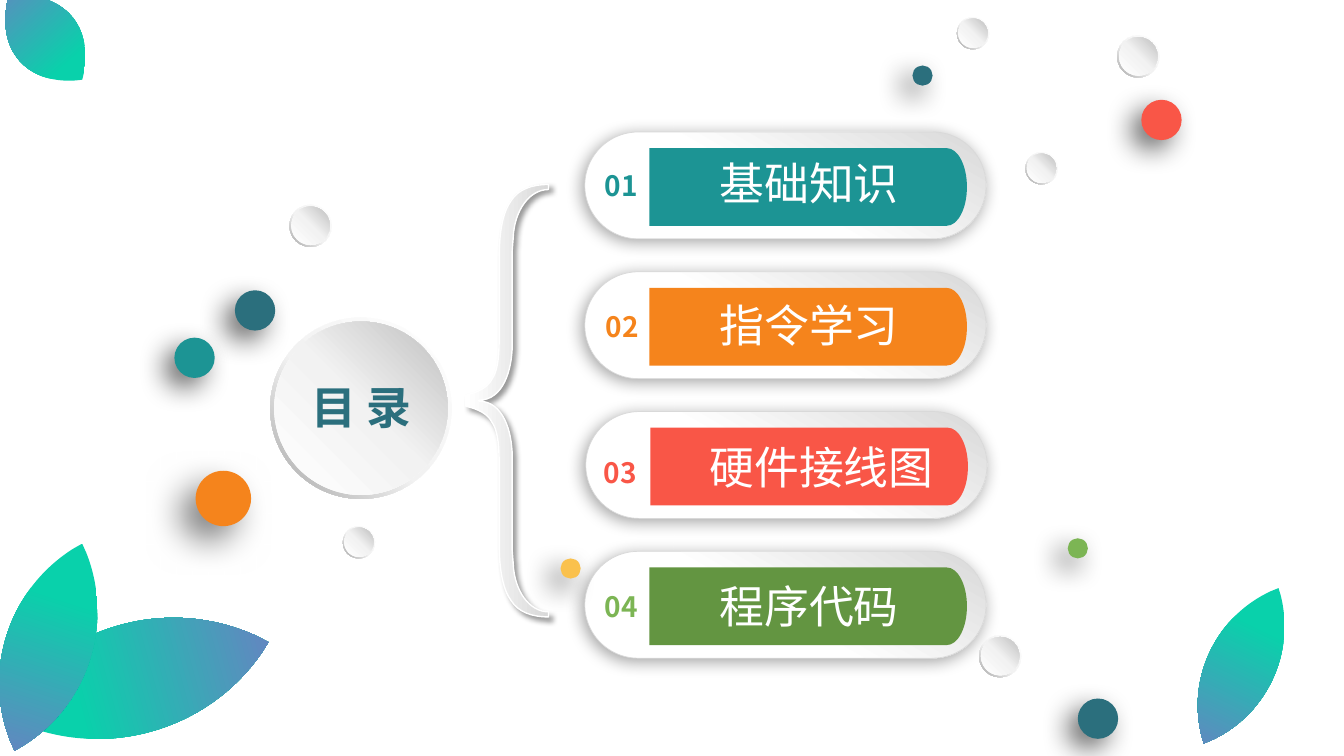
from pptx import Presentation
from pptx.dml.color import RGBColor
from pptx.enum.shapes import MSO_SHAPE
from pptx.enum.text import MSO_ANCHOR, MSO_AUTO_SIZE, PP_ALIGN
from pptx.oxml import parse_xml
from pptx.oxml.ns import nsdecls, qn
from pptx.util import Inches, Pt

FONT = "Noto Sans CJK SC"
COLORS = {
    "white": "FFFFFF", "silver": "D9D9D9", "teal": "1C9494", "orange": "F5841C",
    "red": "F95647", "green": "639541", "lime": "7CB554", "petrol": "2B6F7D",
    "yellow": "FAC14D", "mist": "F2F2F2", "grey": "BFBFBF", "dark grey": "A6A6A6",
    "mint": "09D1AB", "violet": "6E7DC3", "black": "000000",
}
# Gradients: stops as (percent, colour), then the clockwise angle
PILL_GRADIENT = [(45, "white"), (100, "silver")], 300
PILL_EDGE = [(0, "silver"), (100, "white")], 300
RIM_GRADIENT = [(0, "white"), (55, "mist"), (100, "dark grey")], 135
PEARL_GRADIENT = [(0, "white"), (51, "mist"), (100, "grey")], 315
BRACE_GRADIENT = [(0, "white"), (100, "silver")], 0
LEAF_STOPS = [(0, "mint"), (31, "mint"), (100, "violet")]
# Shadows: opacity percent, blur, distance, direction
PILL_SHADOW = 34, 12, 3, 135
BRACE_SHADOW = 40, 4, 3, 45
DOT_SHADOW = 60, 20, 10, 135
BIG_DOT_SHADOW = 50, 25, 15, 135

# Outlines: a pair is a corner, six numbers are a cubic curve
TAB_OUTLINE = [(0, 0), (0.56, 0), (0.83, 0), (2.95, 0), (3.06, 0, 3.15, 0.17, 3.15, 0.385),
               (3.15, 0.6, 3.06, 0.77, 2.95, 0.77), (0.56, 0.77), (0, 0.77)]
LEAF_SIDE = [(0.5, 0), (0.42, 0.035), (0.17, 0.155, 0, 0.315, 0, 0.5),
             (0, 0.685, 0.17, 0.845, 0.42, 0.965), (0.5, 1)]
BRACE_HALF = [(0, 2.09), (0.13, 2.06, 0.22, 2.01, 0.26, 1.93),
              (0.31, 1.86, 0.33, 1.73, 0.33, 1.55), (0.33, 0.74),
              (0.33, 0.46, 0.37, 0.27, 0.45, 0.16),
              (0.52, 0.05, 0.65, 0, 0.82, 0), (0.82, 0.05),
              (0.63, 0.05, 0.48, 0.26, 0.47, 0.53), (0.46, 0.66), (0.46, 1.59),
              (0.46, 1.84, 0.37, 2.14, 0.13, 2.14)]
BRACE_HEIGHT = 4.29

# Left, text, tab colour, number colour, number offset, label top and width
ROW_TOP, ROW_PITCH = 1.31, 4.16 / 3
ROWS = [
    (5.8, "基础知识", "teal", "teal", (0.09, 0.31), 0.19, 2.21),
    (5.8, "指令学习", "orange", "orange", (0.1, 0.32), 0.21, 2.21),
    (5.81, "硬件接线图", "red", "red", (0.07, 0.39), 0.23, 2.46),
    (5.8, "程序代码", "green", "lime", (0.09, 0.33), 0.22, 2.21),
]
LABEL_LEFT = 6.92
# Left, top, width, height, rotation, gradient angle
LEAVES = [(0.79, 5.36, 1.1, 2.74, 74.8, 270), (0.05, 5.34, 0.86, 2.16, 18.1, 90),
          (11.97, 5.75, 0.68, 1.71, 25.7, 90), (0.11, -0.17, 0.68, 1.1, 138.3, 90)]
DOTS = [(11.32, 0.99, 0.4, "red"), (9.05, 0.65, 0.2, "petrol"),
        (2.33, 2.88, 0.4, "petrol"), (5.56, 5.54, 0.2, "yellow"),
        (1.94, 4.67, 0.55, "orange"), (10.69, 6.93, 0.4, "petrol"),
        (1.73, 3.35, 0.4, "teal"), (10.59, 5.34, 0.2, "lime")]
PEARLS = [(9.49, 0.17, 0.32), (11.08, 0.35, 0.42), (3.4, 5.22, 0.32),
          (10.17, 1.51, 0.32), (9.71, 6.3, 0.42), (2.87, 2.03, 0.42)]


def rgb(name):
    return RGBColor.from_string(COLORS[name])


def gradient(stops, angle):
    marks = "".join(f'<a:gs pos="{percent * 1000}"><a:srgbClr val="{COLORS[name]}"/></a:gs>'
                    for percent, name in stops)
    return parse_xml(f'<a:gradFill {nsdecls("a")} rotWithShape="1"><a:gsLst>{marks}</a:gsLst>'
                     f'<a:lin ang="{angle * 60000}" scaled="0"/></a:gradFill>')


def style(shape, fill, edge=None, edge_width=0, shadow=None):
    """Fill with a colour name or a gradient, then set a gradient edge and a shadow."""
    properties = shape.element.spPr
    if isinstance(fill, str):
        shape.fill.solid()
        shape.fill.fore_color.rgb = rgb(fill)
    else:
        properties.insert(2, gradient(*fill))
    if edge:
        shape.line.width = Pt(edge_width)
        properties.find(qn("a:ln")).insert(0, gradient(*edge))
    else:
        shape.line.fill.background()
    shape.shadow.inherit = False
    if shadow:
        opacity, blur, distance, direction = shadow
        properties.find(qn("a:effectLst")).append(parse_xml(
            f'<a:outerShdw {nsdecls("a")} blurRad="{Pt(blur)}" dist="{Pt(distance)}" '
            f'dir="{direction * 60000}" algn="ctr" rotWithShape="0">'
            f'<a:srgbClr val="{COLORS["black"]}"><a:alpha val="{opacity * 1000}"/>'
            f'</a:srgbClr></a:outerShdw>'))


def pairs(part):
    return list(zip(part[::2], part[1::2]))


def mirrored(outline, flip):
    """Run an outline backwards with every point flipped."""
    points = [flip(*point) for part in outline for point in pairs(part)][::-1]
    result, start = [points[0]], 1
    for part in reversed(outline[1:]):
        count = len(part) // 2
        result.append(sum(points[start:start + count], ()))
        start += count
    return result


def add_outline(shapes, left, top, outline, width=1, height=1):
    placed = [[(Inches(left + x * width), Inches(top + y * height)) for x, y in pairs(part)]
              for part in outline]
    builder = shapes.build_freeform(*placed[0][0])
    builder.add_line_segments([part[-1] for part in placed[1:]], close=True)
    shape = builder.convert_to_shape()
    lines = list(shape.element.iter(qn("a:lnTo")))
    for line, part in zip(lines, placed[1:]):
        if len(part) == 3:
            marks = "".join(f'<a:pt x="{x - shape.left}" y="{y - shape.top}"/>' for x, y in part)
            curve = parse_xml(f'<a:cubicBezTo {nsdecls("a")}>{marks}</a:cubicBezTo>')
            line.getparent().replace(line, curve)
    return shape


def write(box, text, size, color, bold=False, wrap=True):
    box.text_frame.word_wrap = wrap
    para = box.text_frame.paragraphs[0]
    para.alignment = PP_ALIGN.CENTER
    span = para.add_run()
    span.text = text
    span.font.color.rgb = rgb(color)
    for name, value in {"size": Pt(size), "bold": bold, "name": FONT}.items():
        setattr(span.font, name, value)
    span.font._element.append(parse_xml(f'<a:ea {nsdecls("a")} typeface="{FONT}"/>'))


def add_row(page, index, row):
    left, text, tab_color, number_color, (number_x, number_y), label_y, label_width = row
    top = ROW_TOP + index * ROW_PITCH
    shapes = page.shapes.add_group_shape().shapes
    pill = shapes.add_shape(MSO_SHAPE.ROUNDED_RECTANGLE, Inches(left), Inches(top),
                            Inches(3.98), Inches(1.06))
    pill.adjustments[0] = 0.5
    style(pill, PILL_GRADIENT, PILL_EDGE, 0.5, PILL_SHADOW)
    style(add_outline(shapes, left + 0.64, top + 0.16, TAB_OUTLINE), tab_color)
    number = shapes.add_textbox(Inches(left + number_x), Inches(top + number_y),
                                Inches(0.54), Inches(0.44))
    write(number, f"{index + 1:02}", 20, number_color, bold=True, wrap=False)
    label = shapes.add_textbox(Inches(LABEL_LEFT), Inches(top + label_y),
                               Inches(label_width), Inches(0.64))
    write(label, text, 32, "white")


def add_pearl(page, left, top, size, core=0.91):
    """Draw a shaded ball whose core is the given share of its size."""
    shapes = page.shapes.add_group_shape().shapes
    rim = shapes.add_shape(MSO_SHAPE.DONUT, Inches(left), Inches(top), Inches(size), Inches(size))
    rim.adjustments[0] = 0.049
    style(rim, RIM_GRADIENT)
    inset = size * (1 - core) / 2
    ball = shapes.add_shape(MSO_SHAPE.OVAL, Inches(left + inset), Inches(top + inset),
                            Inches(size * core), Inches(size * core))
    style(ball, PEARL_GRADIENT)


def add_heading(page, left, top):
    add_pearl(page, left, top, 1.8, 0.956)
    title = page.shapes.title
    page.shapes.element.append(title.element)  # in front of the ball
    places = {"left": left + 0.12, "top": top + 0.61, "width": 1.57, "height": 0.54}
    for name, value in places.items():
        setattr(title, name, Inches(value))
    settings = {"margin_left": 0, "margin_right": 0, "margin_top": 0, "margin_bottom": 0,
                "vertical_anchor": MSO_ANCHOR.MIDDLE, "auto_size": MSO_AUTO_SIZE.NONE}
    for name, value in settings.items():
        setattr(title.text_frame, name, value)
    write(title, "目 录", 32, "petrol", bold=True)


def add_brace(page, left, top):
    lower = mirrored(BRACE_HALF, lambda x, y: (x, BRACE_HEIGHT - y))
    brace = add_outline(page.shapes, left, top, BRACE_HALF + lower)
    style(brace, BRACE_GRADIENT, BRACE_GRADIENT, 1, BRACE_SHADOW)


def add_leaf(page, left, top, width, height, rotation, angle):
    outline = LEAF_SIDE + mirrored(LEAF_SIDE, lambda x, y: (1 - x, y))[1:]
    leaf = add_outline(page.shapes, left, top, outline, width, height)
    leaf.rotation = rotation
    style(leaf, (LEAF_STOPS, angle))


def add_dot(page, left, top, size, color):
    dot = page.shapes.add_shape(MSO_SHAPE.OVAL, Inches(left), Inches(top),
                                Inches(size), Inches(size))
    style(dot, color, shadow=BIG_DOT_SHADOW if size > 0.5 else DOT_SHADOW)


def main():
    deck = Presentation()
    deck.slide_width, deck.slide_height = Inches(13.33), Inches(7.5)
    page = deck.slides.add_slide(deck.slide_layouts[5])
    add_heading(page, 2.68, 3.15)
    add_brace(page, 4.62, 1.83)
    for index, row in enumerate(ROWS):
        add_row(page, index, row)
    for add_part, places in ((add_leaf, LEAVES), (add_dot, DOTS), (add_pearl, PEARLS)):
        for place in places:
            add_part(page, *place)
    deck.save("out.pptx")


if __name__ == "__main__":
    main()
